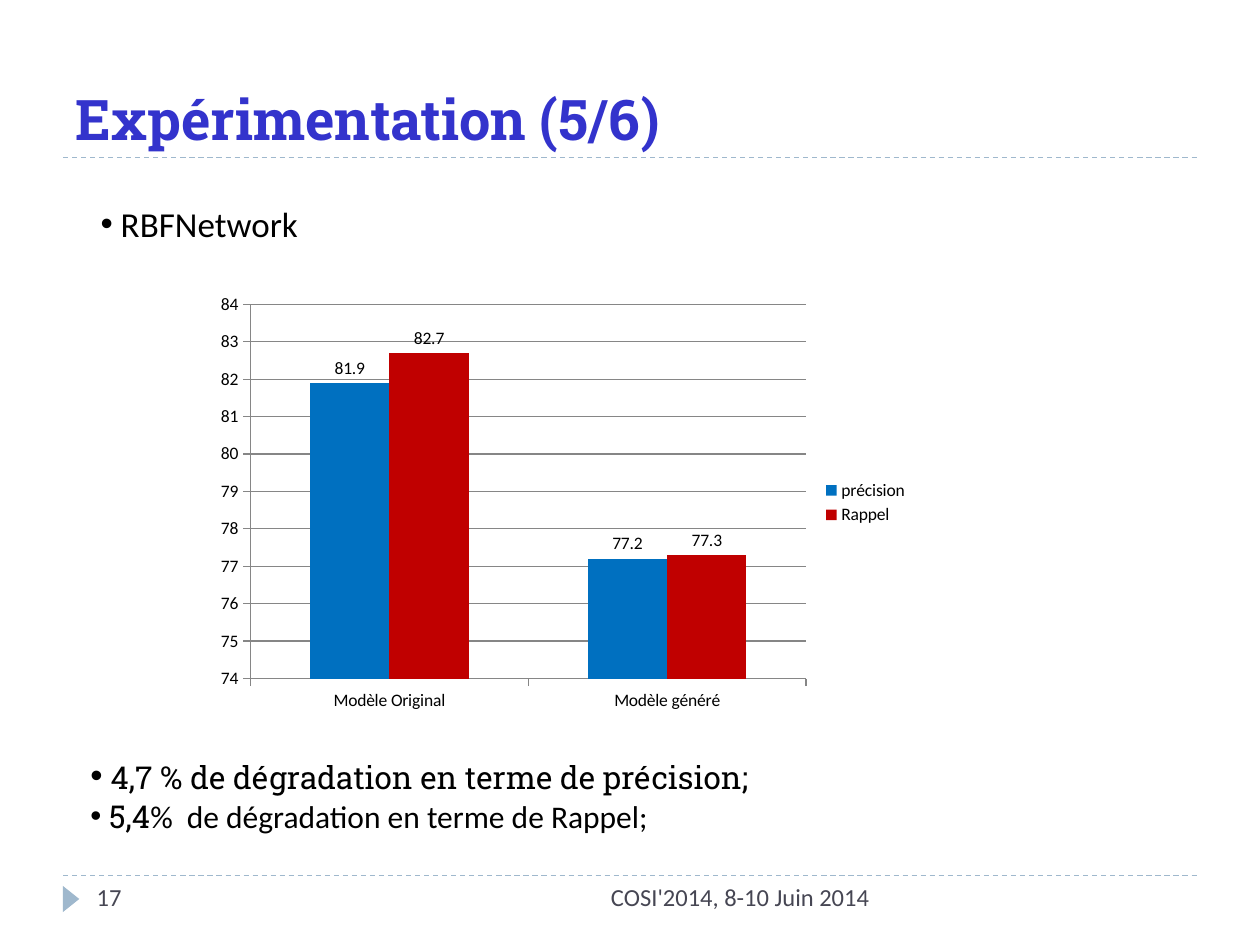
from dataclasses import dataclass

from lxml.etree import SubElement
from pptx import Presentation
from pptx.chart.data import CategoryChartData
from pptx.dml.color import RGBColor
from pptx.enum.chart import (
    XL_CHART_TYPE as ChartType,
    XL_LABEL_POSITION as LabelPosition,
    XL_LEGEND_POSITION as LegendPosition,
    XL_TICK_MARK as TickMark,
)
from pptx.enum.dml import MSO_LINE as LineStyle
from pptx.enum.shapes import MSO_CONNECTOR as Connector, MSO_SHAPE as ShapeType
from pptx.enum.text import MSO_ANCHOR as Anchor, PP_ALIGN as Align
from pptx.oxml.ns import qn
from pptx.slide import Slide
from pptx.util import Pt

COLORS = {
    "title": "3333CC",
    "text": "000000",
    "footer": "464653",
    "accent": "9FB8CD",
    "grid": "868686",
    "precision": "0070C0",
    "recall": "C00000",
}
BODY, SLAB = "Calibri", "Roboto Slab"


@dataclass(frozen=True)
class Style:
    face: str
    size: float
    color: str = "text"
    bold: bool = False


@dataclass(frozen=True)
class Piece:
    text: str
    style: Style


@dataclass(frozen=True)
class TextBlock:
    left: float
    top: float
    width: float
    height: float
    paragraphs: tuple[tuple[Piece, ...], ...]
    bullet: bool = False
    align: Align = Align.LEFT
    anchor: Anchor = Anchor.TOP


@dataclass(frozen=True)
class Series:
    name: str
    values: tuple[float, ...]
    color: str


TITLE = Style(SLAB, 32, "title", True)
HEADING = Style(BODY, 20)
HEADING_BOLD = Style(BODY, 20, bold=True)
FINDING = Style(SLAB, 18)
FINDING_PLAIN = Style(BODY, 18)
FOOTER = Style(BODY, 14, "footer")

TEXT_BLOCKS = [
    TextBlock(36, 12, 648, 78, ((Piece("Expérimentation (5/6)", TITLE),),), anchor=Anchor.BOTTOM),
    TextBlock(50.4, 112.3, 450, 31.7, ((Piece(" RBFNetwork", HEADING),),), bullet=True),
    TextBlock(48.2, 500.4, 156.2, 28.8, ((Piece("17", FOOTER),),)),
    TextBlock(228.2, 500.4, 275.8, 28.8, ((Piece("COSI'2014, 8-10 Juin 2014", FOOTER),),), align=Align.RIGHT),
    TextBlock(
        44.6, 427.7, 624.2, 53.3,
        (
            (Piece(" ", HEADING_BOLD), Piece("4,7 % de dégradation en terme de précision;", FINDING)),
            (Piece(" 5,4", FINDING), Piece("%  de dégradation en terme de Rappel;", FINDING_PLAIN)),
        ),
        bullet=True,
    ),
]
CATEGORIES = ("Modèle Original", "Modèle généré")
SERIES = [
    Series("précision ", (81.9, 77.2), "precision"),
    Series("Rappel", (82.7, 77.3), "recall"),
]
RULE_HEIGHTS = (90, 500.4)


def rgb(name: str) -> RGBColor:
    return RGBColor.from_string(COLORS[name])


def apply_style(font, style: Style) -> None:
    font.name = style.face
    font.size = Pt(style.size)
    font.bold = style.bold
    font.color.rgb = rgb(style.color)


def draw_rule(slide: Slide, top: float) -> None:
    rule = slide.shapes.add_connector(Connector.STRAIGHT, Pt(36), Pt(top), Pt(684), Pt(top))
    rule.line.color.rgb = rgb("accent")
    rule.line.width = Pt(0.75)
    rule.line.dash_style = LineStyle.DASH
    SubElement(rule._element.spPr, qn("a:effectLst"))


def draw_marker(slide: Slide) -> None:
    marker = slide.shapes.add_shape(ShapeType.ISOSCELES_TRIANGLE, Pt(33.1), Pt(509), Pt(15), Pt(9.4))
    marker.rotation = 90
    marker.shadow.inherit = False
    marker.fill.solid()
    marker.fill.fore_color.rgb = rgb("accent")
    marker.line.fill.background()


def draw_text(slide: Slide, block: TextBlock) -> None:
    shape = slide.shapes.add_textbox(Pt(block.left), Pt(block.top), Pt(block.width), Pt(block.height))
    frame = shape.text_frame
    frame.word_wrap = True
    frame.vertical_anchor = block.anchor
    for index, pieces in enumerate(block.paragraphs):
        paragraph = frame.add_paragraph() if index else frame.paragraphs[0]
        paragraph.alignment = block.align
        if block.bullet:
            properties = paragraph._p.get_or_add_pPr()
            SubElement(properties, qn("a:buFont"), typeface="Arial")
            SubElement(properties, qn("a:buChar"), char="•")
        uniform = len(pieces) == 1
        if uniform:
            apply_style(paragraph.font, pieces[0].style)
        for piece in pieces:
            run = paragraph.add_run()
            run.text = piece.text
            if not uniform:
                apply_style(run.font, piece.style)


def draw_chart(slide: Slide) -> None:
    data = CategoryChartData()
    data.categories = CATEGORIES
    for entry in SERIES:
        data.add_series(entry.name, entry.values)
    chart = slide.shapes.add_chart(
        ChartType.COLUMN_CLUSTERED, Pt(118), Pt(163.4), Pt(410.4), Pt(247.7), data
    ).chart
    apply_style(chart.font, Style(BODY, 10))
    chart.has_title = False
    chart.has_legend = True
    chart.legend.position = LegendPosition.RIGHT
    chart.legend.include_in_layout = False

    value_axis = chart.value_axis
    value_axis.minimum_scale = 74
    value_axis.maximum_scale = 84
    value_axis.major_unit = 1
    value_axis.has_major_gridlines = True
    for axis in (chart.category_axis, value_axis):
        axis.major_tick_mark = TickMark.OUTSIDE
    for axis_part in (chart.category_axis, value_axis, value_axis.major_gridlines):
        axis_part.format.line.color.rgb = rgb("grid")
        axis_part.format.line.width = Pt(0.75)

    plot = chart.plots[0]
    plot.gap_width = 150
    plot.vary_by_categories = False
    for series, entry in zip(plot.series, SERIES):
        series.format.fill.solid()
        series.format.fill.fore_color.rgb = rgb(entry.color)
        series.data_labels.show_value = True
        series.data_labels.position = LabelPosition.OUTSIDE_END


def main() -> None:
    presentation = Presentation()
    presentation.slide_width, presentation.slide_height = Pt(720), Pt(540)
    slide = presentation.slides.add_slide(presentation.slide_layouts[6])
    for top in RULE_HEIGHTS:
        draw_rule(slide, top)
    draw_marker(slide)
    draw_chart(slide)
    for block in TEXT_BLOCKS:
        draw_text(slide, block)
    presentation.save("out.pptx")


if __name__ == "__main__":
    main()
